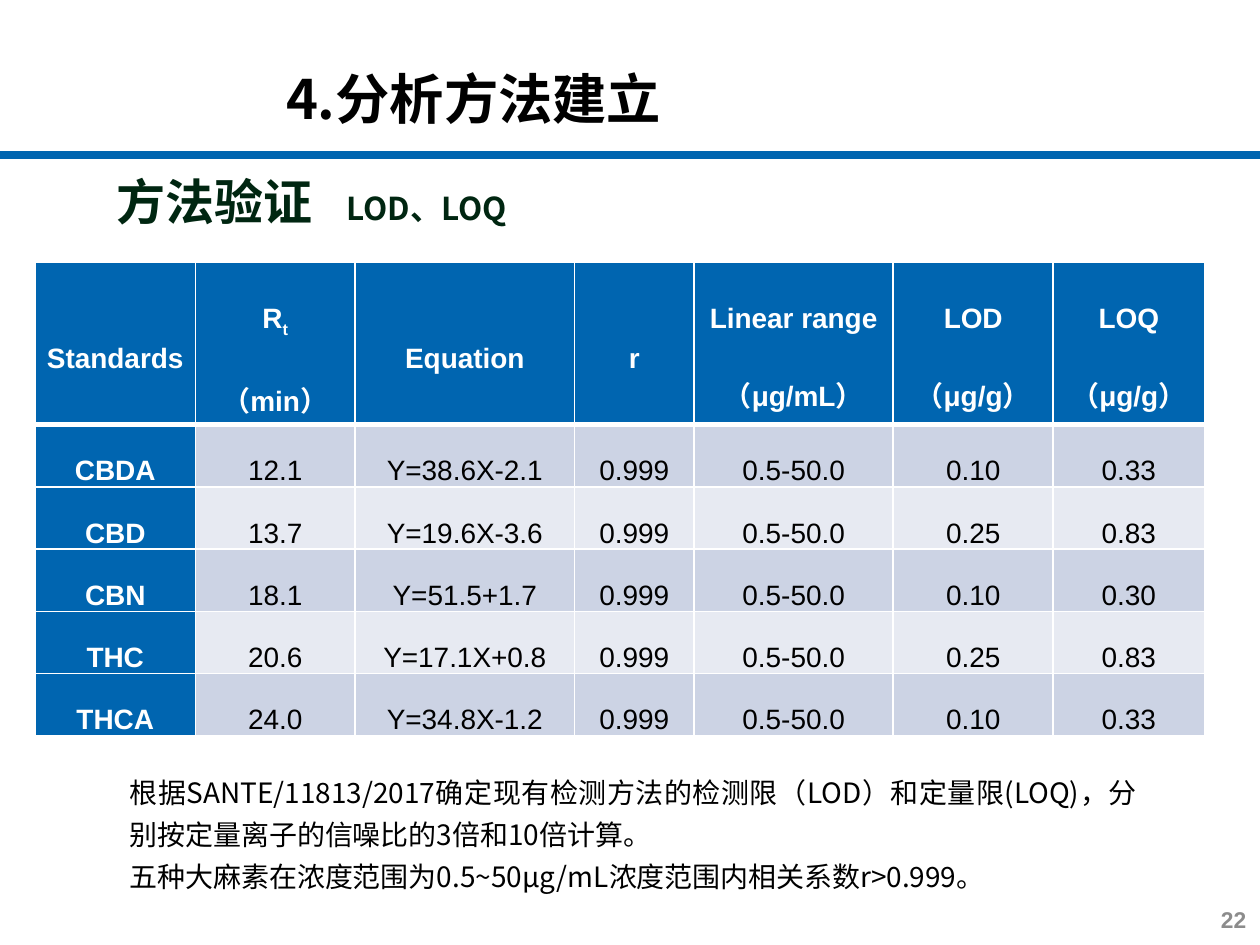
from dataclasses import dataclass
from typing import Any

import pptx
import pptx.dml.color
import pptx.enum.shapes
import pptx.enum.text
import pptx.oxml
import pptx.oxml.ns
import pptx.util

PX = 9144  # EMU in one px, 100 px to the inch
ALIGN = pptx.enum.text.PP_ALIGN
ANCHOR = pptx.enum.text.MSO_ANCHOR


@dataclass(frozen=True)
class Theme:
    blue: str = "0065B0"
    green: str = "002611"
    black: str = "000000"
    white: str = "FFFFFF"
    grey: str = "8C8C8C"
    bands: tuple[str, str] = ("CCD3E4", "E7EAF2")
    latin: str = "Arial"
    chinese: str = "Noto Sans CJK SC"
    title: int = 31
    heading: int = 28
    subheading: int = 18
    body: int = 16
    number: int = 13


@dataclass(frozen=True)
class Box:
    left: int
    top: int
    width: int
    height: int

    def emu(self) -> list[int]:
        return [side * PX for side in (self.left, self.top, self.width, self.height)]


@dataclass(frozen=True)
class Standard:
    name: str
    time: str
    equation: str
    lod: str
    loq: str
    r: str = "0.999"
    linear_range: str = "0.5-50.0"

    def cells(self) -> list[str]:
        return [self.name, self.time, self.equation, self.r,
                self.linear_range, self.lod, self.loq]


THEME = Theme()
COLUMNS = [127, 127, 174, 95, 158, 127, 120]
ROWS = [129, 39, 39, 39, 39, 39]
HEADERS = ["Standards", "R", "Equation", "r", "Linear range（μg/mL）",
           "LOD（μg/g）", "LOQ（μg/g）"]
STANDARDS = [
    Standard("CBDA", "12.1", "Y=38.6X-2.1", "0.10", "0.33"),
    Standard("CBD", "13.7", "Y=19.6X-3.6", "0.25", "0.83"),
    Standard("CBN", "18.1", "Y=51.5+1.7", "0.10", "0.30"),
    Standard("THC", "20.6", "Y=17.1X+0.8", "0.25", "0.83"),
    Standard("THCA", "24.0", "Y=34.8X-1.2", "0.10", "0.33"),
]
NOTES = [
    "根据SANTE/11813/2017确定现有检测方法的检测限（LOD）和定量限(LOQ)，"
    "分别按定量离子的信噪比的3倍和10倍计算。",
    "五种大麻素在浓度范围为0.5~50μg/mL浓度范围内相关系数r>0.999。",
]


def make_element(tag: str, inner: str = "", **attributes: Any) -> Any:
    values = " ".join(f'{key}="{value}"' for key, value in attributes.items())
    namespace = pptx.oxml.ns.nsdecls("a")
    return pptx.oxml.parse_xml(f"<a:{tag} {namespace} {values}>{inner}</a:{tag}>")


def add_span(para: Any, text: str, *, size: int = THEME.body, color: str = THEME.black,
             bold: bool = False, font: str = THEME.chinese, baseline: int = 0) -> None:
    """Add a run to the paragraph in the given format."""
    span = para.add_run()
    span.text = text
    span.font.size = pptx.util.Pt(size)
    span.font.bold = bold
    span.font.color.rgb = pptx.dml.color.RGBColor.from_string(color)
    span.font.name = font
    properties = span.font._element
    properties.append(make_element("ea", typeface=THEME.chinese))
    if baseline:
        properties.set("baseline", str(baseline * 1000))


def place(shape: Any, box: Box, anchor: Any) -> Any:
    """Move a text shape and return its text frame."""
    shape.left, shape.top, shape.width, shape.height = box.emu()
    frame = shape.text_frame
    frame.word_wrap = True
    frame.auto_size = pptx.enum.text.MSO_AUTO_SIZE.NONE
    frame.vertical_anchor = anchor
    return frame


def add_rule(page: Any) -> None:
    line = page.shapes.add_connector(
        pptx.enum.shapes.MSO_CONNECTOR.STRAIGHT, 0, 123 * PX, 1004 * PX, 123 * PX)
    line.line.color.rgb = pptx.dml.color.RGBColor.from_string(THEME.blue)
    line.line.width = pptx.util.Pt(4.5)
    line._element.spPr.append(make_element("effectLst"))


def add_heading(page: Any) -> None:
    box = Box(83, 131, 488, 57)
    frame = place(page.shapes.add_textbox(*box.emu()), box, ANCHOR.MIDDLE)
    para = frame.paragraphs[0]
    stop = make_element("tab", pos=182 * PX, algn="l")
    tabs = make_element("tabLst")
    tabs.append(stop)
    para._p.get_or_add_pPr().append(tabs)
    add_span(para, "方法验证\t", size=THEME.heading, color=THEME.green, bold=True)
    add_span(para, "LOD、LOQ", size=THEME.subheading, color=THEME.green, bold=True)


def add_notes(shape: Any) -> None:
    frame = place(shape, Box(93, 604, 819, 131), ANCHOR.TOP)
    for index, text in enumerate(NOTES):
        para = frame.add_paragraph() if index else frame.paragraphs[0]
        properties = para._p.get_or_add_pPr()
        properties.set("marL", "0")
        properties.set("indent", "0")
        properties.append(make_element("buNone"))
        para.alignment = ALIGN.JUSTIFY
        para.line_spacing = 1.25
        para.space_before = pptx.util.Pt(0)
        add_span(para, text)


def format_cell(cell: Any, fill: str, top: int, bottom: int) -> None:
    """Set margins, white borders (widths in points) and fill."""
    cell.margin_left = cell.margin_right = 7 * PX
    cell.margin_top = cell.margin_bottom = 0
    properties = cell._tc.get_or_add_tcPr()
    paint = f'<a:solidFill><a:srgbClr val="{THEME.white}"/></a:solidFill>'
    for side, width in {"L": 1, "R": 1, "T": top, "B": bottom}.items():
        properties.append(make_element(f"ln{side}", paint, w=pptx.util.Pt(width)))
    cell.fill.solid()
    cell.fill.fore_color.rgb = pptx.dml.color.RGBColor.from_string(fill)


def add_cell_span(para: Any, text: str, strong: bool, baseline: int = 0) -> None:
    para.alignment = ALIGN.CENTER
    para.line_spacing = 2.0
    add_span(para, text, color=THEME.white if strong else THEME.black,
             bold=strong, font=THEME.latin, baseline=baseline)


def add_results(page: Any) -> None:
    box = Box(28, 208, sum(COLUMNS), sum(ROWS))
    table = page.shapes.add_table(len(ROWS), len(COLUMNS), *box.emu()).table
    table.first_col = True
    for column, width in zip(table.columns, COLUMNS):
        column.width = width * PX
    for row, height in zip(table.rows, ROWS):
        row.height = height * PX
    contents = [HEADERS] + [standard.cells() for standard in STANDARDS]
    for i, texts in enumerate(contents):
        for j, text in enumerate(texts):
            cell = table.cell(i, j)
            strong = i == 0 or j == 0
            format_cell(cell, THEME.blue if strong else THEME.bands[(i - 1) % 2],
                        top=3 if i == 1 else 1, bottom=3 if i == 0 else 1)
            cell.vertical_anchor = ANCHOR.TOP if i else ANCHOR.MIDDLE
            add_cell_span(cell.text_frame.paragraphs[0], text, strong)
    time_frame = table.cell(0, 1).text_frame
    add_cell_span(time_frame.paragraphs[0], "t", True, baseline=-25)
    add_cell_span(time_frame.add_paragraph(), "（min）", True)


def add_page_number(page: Any) -> None:
    box = Box(848, 709, 152, 41)
    frame = place(page.shapes.add_textbox(*box.emu()), box, ANCHOR.MIDDLE)
    frame.margin_left = frame.margin_right = 11 * PX
    frame.margin_top = frame.margin_bottom = 6 * PX
    para = frame.paragraphs[0]
    para.alignment = ALIGN.RIGHT
    add_span(para, "22", size=THEME.number, color=THEME.grey, bold=True, font=THEME.latin)


def main() -> None:
    deck = pptx.Presentation()
    deck.slide_width, deck.slide_height = 1000 * PX, 750 * PX
    page = deck.slides.add_slide(deck.slide_layouts[1])
    add_rule(page)
    title = place(page.shapes.title, Box(217, 44, 726, 68), ANCHOR.MIDDLE).paragraphs[0]
    title.alignment = ALIGN.LEFT
    add_span(title, "4.分析方法建立", size=THEME.title, bold=True)
    add_heading(page)
    add_notes(page.placeholders[1])
    add_results(page)
    add_page_number(page)
    deck.save("out.pptx")


if __name__ == "__main__":
    main()
